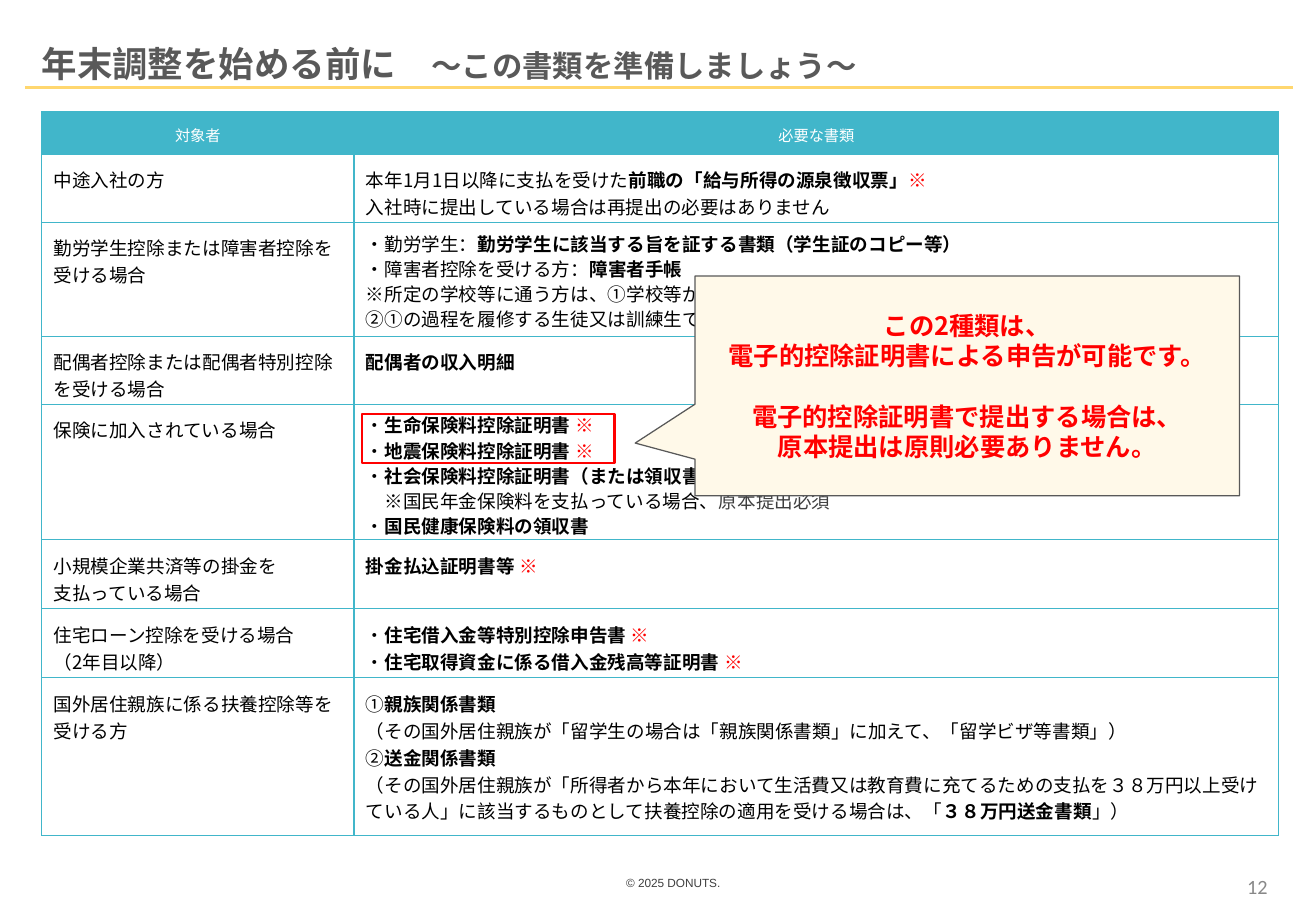
from dataclasses import dataclass

from lxml import etree
from pptx import Presentation
from pptx import util as u
from pptx.dml.color import RGBColor
from pptx.enum import shapes, text
from pptx.oxml.ns import qn


@dataclass(frozen=True)
class Theme:
    """Colours, fonts and type sizes of the deck."""
    teal: str = "41B6CA"
    yellow: str = "FFD76F"
    cream: str = "FFF9E9"
    red: str = "FF0000"
    ink: str = "000000"
    grey: str = "595959"
    soft: str = "3F3F3F"
    pale: str = "888888"
    white: str = "FFFFFF"
    font: str = "Noto Sans CJK JP"
    title: float = 21
    subtitle: float = 18
    callout: float = 15
    body: float = 11
    header: float = 9


THEME = Theme()
CENTER = text.PP_ALIGN.CENTER


def bold(words):
    """Return a bold black span."""
    return words, THEME.ink, True


def plain(words, color=THEME.ink):
    """Return a regular span."""
    return words, color, False


MARK = ("※", THEME.red, True)

HEADERS = ["対象者", "必要な書類"]
ROW_HEIGHTS = [0.88, 1.43, 2.38, 1.42, 2.84, 1.44, 1.44, 3.3]
DENSE_ROWS = (2, 4)
DOCUMENTS = [
    (["中途入社の方"],
     [[plain("本年1月1日以降に支払を受けた"), bold("前職の「給与所得の源泉徴収票」"), MARK],
      [plain("入社時に提出している場合は再提出の必要はありません")]]),
    (["勤労学生控除または障害者控除を受ける場合"],
     [[plain("・勤労学生："), bold("勤労学生に該当する旨を証する書類（学生証のコピー等）")],
      [plain("・障害者控除を受ける方："), bold("障害者手帳")],
      [plain("※所定の学校等に通う方は、➀学校等が")],
      [plain("②➀の過程を履修する生徒又は訓練生で")]]),
    (["配偶者控除または配偶者特別控除を受ける場合"],
     [[bold("配偶者の収入明細")]]),
    (["保険に加入されている場合"],
     [[plain("・"), bold("生命保険料控除証明書 "), MARK],
      [plain("・"), bold("地震保険料控除証明書 "), MARK],
      [plain("・"), bold("社会保険料控除証明書（または領収書")],
      [plain("　※国民年金保険料を支払っている場合、"), plain("原本提出必須", THEME.soft)],
      [plain("・"), bold("国民健康保険料の領収書")]]),
    (["小規模企業共済等の掛金を", "支払っている場合"],
     [[bold("掛金払込証明書等 "), MARK]]),
    (["住宅ローン控除を受ける場合", "（2年目以降）"],
     [[plain("・"), bold("住宅借入金等特別控除申告書 "), MARK],
      [plain("・"), bold("住宅取得資金に係る借入金残高等証明書 "), MARK]]),
    (["国外居住親族に係る扶養控除等を受ける方"],
     [[plain("①"), bold("親族関係書類")],
      [plain("（その国外居住親族が「留学生の場合は「親族関係書類」に加えて、「留学ビザ等書類」）")],
      [plain("②"), bold("送金関係書類")],
      [plain("（その国外居住親族が「所得者から本年において生活費又は教育費に充てるための支払を"
             "３８万円以上受けている人」に該当するものとして扶養控除の適用を受ける場合は、「"),
       bold("３８万円送金書類"), plain("」）")]]),
]
CALLOUT_LINES = ["この2種類は、", "電子的控除証明書による申告が可能です。",
                 "電子的控除証明書で提出する場合は、", "原本提出は原則必要ありません。"]


def rgb(color):
    """Return a colour object for a hex string."""
    return RGBColor.from_string(color)


def add_span(para, span, size, font=THEME.font):
    """Add one formatted run to a paragraph."""
    words, color, heavy = span
    run = para.add_run()
    run.text = words
    run.font.size, run.font.bold, run.font.name = u.Pt(size), heavy, font
    run.font.color.rgb = rgb(color)
    etree.SubElement(run._r.get_or_add_rPr(), qn("a:ea"), typeface=font)


def write(frame, lines, size, align=None, font=THEME.font, spacing=None):
    """Fill a text frame with lines of spans."""
    frame.word_wrap = True
    for index, line in enumerate(lines):
        para = frame.paragraphs[0] if index == 0 else frame.add_paragraph()
        para.alignment = align
        para.line_spacing = spacing
        for span in line:
            add_span(para, span, size, font)


def set_margins(holder, left, top, right, bottom):
    """Set the four insets of a text frame or cell in centimetres."""
    holder.margin_left, holder.margin_top = u.Cm(left), u.Cm(top)
    holder.margin_right, holder.margin_bottom = u.Cm(right), u.Cm(bottom)


def add_title(page, left, top, width, height):
    """Place the title and the rule under it."""
    title = page.shapes.title
    title.left, title.top, title.width, title.height = map(u.Cm, (left, top, width, height))
    frame = title.text_frame
    frame.auto_size = text.MSO_AUTO_SIZE.NONE
    frame.vertical_anchor = text.MSO_ANCHOR.TOP
    set_margins(frame, 0, 0.03, 0, 0)
    write(frame, [[("年末調整を始める前に　", THEME.grey, True)]], THEME.title, text.PP_ALIGN.LEFT)
    add_span(frame.paragraphs[0], ("～この書類を準備しましょう～", THEME.grey, True), THEME.subtitle)
    y = u.Cm(top + height + 0.05)
    rule = page.shapes.add_connector(shapes.MSO_CONNECTOR.STRAIGHT,
                                     u.Cm(left - 0.34), y, u.Cm(left + 26.16), y)
    rule.line.color.rgb, rule.line.width = rgb(THEME.yellow), u.Pt(2)
    etree.SubElement(rule._element.spPr, qn("a:effectLst"))


def add_borders(cell):
    """Draw a thin line on all four sides of a cell."""
    props = cell._tc.get_or_add_tcPr()
    for index, side in enumerate(("lnL", "lnR", "lnT", "lnB")):
        line = etree.Element(qn(f"a:{side}"), w=str(u.Pt(0.75)))
        fill = etree.SubElement(line, qn("a:solidFill"))
        etree.SubElement(fill, qn("a:srgbClr"), val=THEME.teal)
        props.insert(index, line)


def add_documents_table(page, left, top, width, height):
    """Place the table of required documents."""
    table = page.shapes.add_table(len(ROW_HEIGHTS), len(HEADERS),
                                  *map(u.Cm, (left, top, width, height))).table
    for column, share in zip(table.columns, (6.53, width - 6.53)):
        column.width = u.Cm(share)
    for row, row_height in zip(table.rows, ROW_HEIGHTS):
        row.height = u.Cm(row_height)
    for cell in table.iter_cells():
        set_margins(cell, 0.25, 0.25, 0.25, 0)
        cell.fill.background()
        add_borders(cell)
    for cell, label in zip(table.rows[0].cells, HEADERS):
        cell.fill.solid()
        cell.fill.fore_color.rgb = rgb(THEME.teal)
        write(cell.text_frame, [[plain(label, THEME.white)]], THEME.header, CENTER)
    for index, (people, papers) in enumerate(DOCUMENTS, 1):
        write(table.cell(index, 0).text_frame, [[plain(line)] for line in people], THEME.body)
        dense = index in DENSE_ROWS
        write(table.cell(index, 1).text_frame, papers, THEME.body,
              spacing=u.Pt(15) if dense else None)
        if dense:
            table.cell(index, 1).margin_top = u.Cm(0.18)


def add_highlight(page, left, top, width, height):
    """Frame the two certificates that can be filed electronically."""
    box = page.shapes.add_shape(shapes.MSO_SHAPE.RECTANGLE, *map(u.Cm, (left, top, width, height)))
    box.shadow.inherit = False
    box.fill.background()
    box.line.color.rgb, box.line.width = rgb(THEME.red), u.Pt(1.5)


def add_callout(page, left, top, width, height):
    """Place the callout that points at the highlighted certificates."""
    box = page.shapes.add_shape(shapes.MSO_SHAPE.RECTANGULAR_CALLOUT,
                                *map(u.Cm, (left, top, width, height)))
    box.adjustments[0], box.adjustments[1] = -0.61, 0.26
    box.shadow.inherit = False
    box.fill.solid()
    box.fill.fore_color.rgb = rgb(THEME.cream)
    box.line.color.rgb, box.line.width = rgb(THEME.grey), u.Pt(0.75)
    frame = box.text_frame
    frame.vertical_anchor = text.MSO_ANCHOR.MIDDLE
    set_margins(frame, 0.25, 0.25, 0.25, 0.25)
    write(frame, [[(line, THEME.red, True)] for line in CALLOUT_LINES],
          THEME.callout, CENTER, spacing=u.Pt(18))
    frame.paragraphs[2].space_before = u.Pt(18)


def add_footer_text(page, left, top, width, height, span, size, align, font):
    """Place one small line in the footer."""
    frame = page.shapes.add_textbox(*map(u.Cm, (left, top, width, height))).text_frame
    frame.vertical_anchor = text.MSO_ANCHOR.MIDDLE
    write(frame, [[span]], size, align, font)


def main():
    """Build and save the deck."""
    deck = Presentation()
    deck.slide_width, deck.slide_height = u.Cm(27.51), u.Cm(19.05)
    page = deck.slides.add_slide(deck.slide_layouts[5])
    add_title(page, 0.87, 0.84, 22.45, 0.94)
    add_documents_table(page, 0.87, 2.34, 25.86, sum(ROW_HEIGHTS))
    add_highlight(page, 7.57, 8.66, 5.28, 1.02)
    add_callout(page, 14.53, 5.77, 11.38, 4.6)
    add_footer_text(page, 5.82, 17.96, 16.51, 1.02,
                    plain("© 2025 DONUTS.", THEME.soft), 7, CENTER, "Arial")
    add_footer_text(page, 20.55, 18.03, 6.2, 1.02,
                    plain("12", THEME.pale), 12, text.PP_ALIGN.RIGHT, "Calibri")
    deck.save("out.pptx")


if __name__ == "__main__":
    main()
